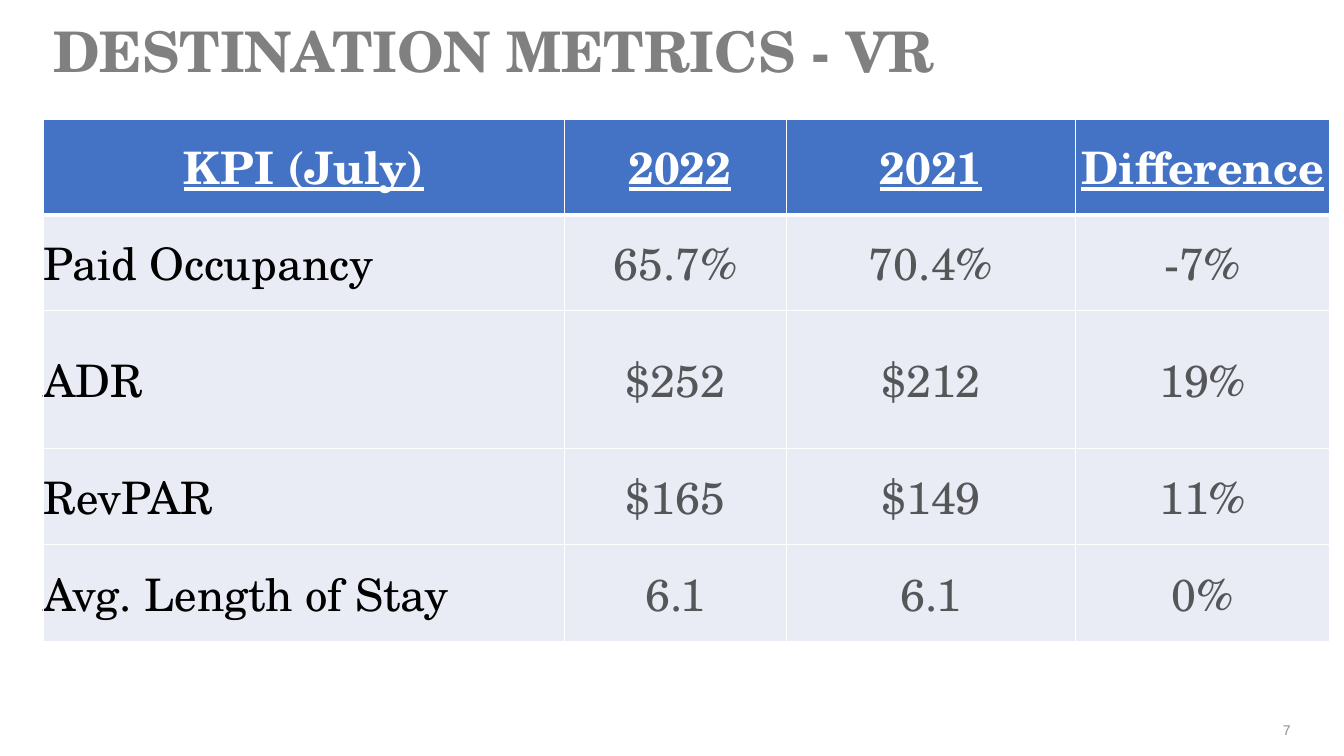
from lxml.etree import SubElement
from pptx import Presentation
from pptx.dml.color import RGBColor
from pptx.enum.text import MSO_ANCHOR, PP_ALIGN
from pptx.oxml.ns import qn
from pptx.util import Inches, Pt

COLORS = {
    "title": "808080",
    "number": "8C8C8C",
    "header": "4472C4",
    "body": "E9EBF5",
    "white": "FFFFFF",
    "label": "000000",
    "value": "555658",
}
SERIF = "TeX Gyre Schola"
SANS = "Arial"

COLUMN_WIDTHS = [5.17, 2.2, 2.87, 2.52]
ROW_HEIGHTS = [0.95, 0.95, 1.37, 0.95, 0.97]
METRICS = [
    ["KPI (July)", "2022", "2021", "Difference"],
    ["Paid Occupancy", "65.7%", "70.4%", "-7%"],
    ["ADR", "$252", "$212", "19%"],
    ["RevPAR", "$165", "$149", "11%"],
    ["Avg. Length of Stay", "6.1", "6.1", "0%"],
]


class MetricsPage:
    def __init__(self, deck):
        self.page = deck.slides.add_slide(deck.slide_layouts[6])
        self.colors = {name: RGBColor.from_string(value) for name, value in COLORS.items()}

    def paragraph(self, frame, text, color, align=PP_ALIGN.LEFT, **font_values):
        para = frame.paragraphs[0]
        para.alignment = align
        span = para.add_run()
        span.text = text
        for name, value in font_values.items():
            setattr(span.font, name, value)
        span.font.color.rgb = self.colors[color]
        return para

    def text(self, place, text, color, **format_values):
        box = self.page.shapes.add_textbox(*map(Inches, place))
        frame = box.text_frame
        frame.word_wrap = True
        frame.vertical_anchor = MSO_ANCHOR.MIDDLE
        return self.paragraph(frame, text, color, **format_values)

    def borders(self, cell, widths):
        properties = cell._tc.get_or_add_tcPr()
        for side, width in widths.items():
            line = SubElement(properties, qn(f"a:ln{side}"), w=str(Pt(width)))
            fill = SubElement(line, qn("a:solidFill"))
            SubElement(fill, qn("a:srgbClr"), val=COLORS["white"])

    def cell(self, cell, text, row, column):
        header = row == 0
        format_values = {
            "margin_left": Inches(0.09 if (row, column) == (0, 1) else 0),
            "margin_right": 0,
            "margin_top": 0,
            "margin_bottom": 0,
            "vertical_anchor": MSO_ANCHOR.MIDDLE,
        }
        for name, value in format_values.items():
            setattr(cell, name, value)
        self.borders(cell, {"L": 1, "R": 1, "T": 3 if row == 1 else 1, "B": 3 if header else 1})
        cell.fill.solid()
        cell.fill.fore_color.rgb = self.colors["header" if header else "body"]
        label = column == 0 and not header
        color = "white" if header else "label" if label else "value"
        align = PP_ALIGN.LEFT if label else PP_ALIGN.CENTER
        self.paragraph(cell.text_frame, text, color, align,
                       name=SERIF, size=Pt(32), bold=header, underline=header)

    def table(self, left, top, widths, heights, rows):
        place = map(Inches, (left, top, sum(widths), sum(heights)))
        table = self.page.shapes.add_table(len(heights), len(widths), *place).table
        for column, width in zip(table.columns, widths):
            column.width = Inches(width)
        for row, height in zip(table.rows, heights):
            row.height = Inches(height)
        for row, texts in enumerate(rows):
            for column, text in enumerate(texts):
                self.cell(table.cell(row, column), text, row, column)


def main():
    deck = Presentation()
    deck.slide_width = Inches(13.33)
    deck.slide_height = Inches(7.5)
    metrics = MetricsPage(deck)
    title = metrics.text((0.43, 0.16, 10.62, 0.75), "DESTINATION METRICS - VR", "title",
                         name=SERIF, size=Pt(40), bold=True)
    title.line_spacing = 0.9
    metrics.table(0.43, 1.18, COLUMN_WIDTHS, ROW_HEIGHTS, METRICS)
    metrics.text((9.9, 7.04, 3, 0.4), "7", "number", align=PP_ALIGN.RIGHT,
                 name=SANS, size=Pt(10))
    deck.save("out.pptx")


if __name__ == "__main__":
    main()
